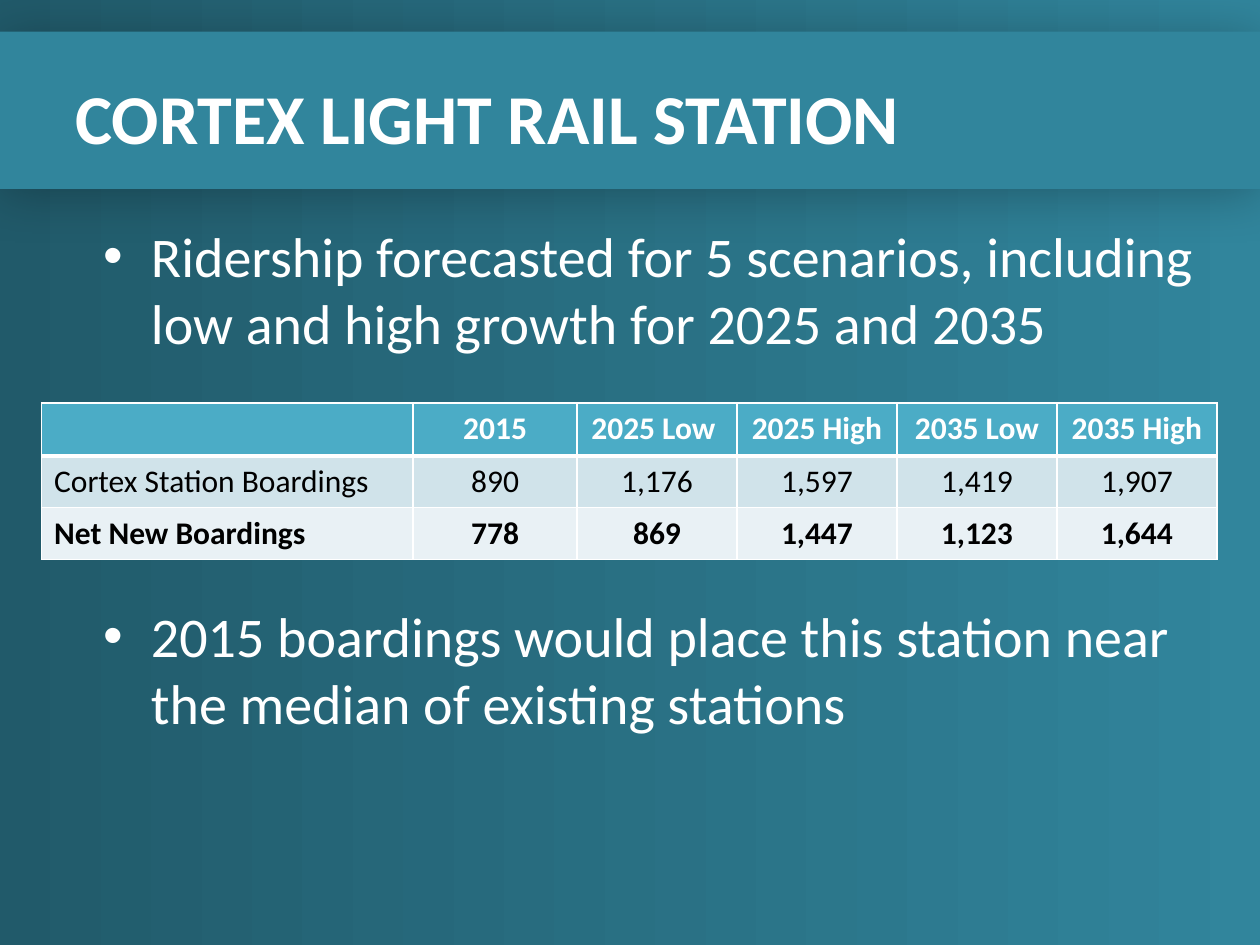
from lxml.etree import SubElement
from pptx import Presentation
from pptx.dml.color import RGBColor
from pptx.enum.shapes import MSO_SHAPE
from pptx.enum.text import MSO_ANCHOR, PP_ALIGN
from pptx.oxml.ns import qn
from pptx.util import Inches, Pt

WIDTH, HEIGHT = 10, 7.5
WHITE, BLACK = "FFFFFF", "000000"
DEEP_TEAL, TEAL, SKY = "215A6A", "31859C", "4BACC6"
BAND_DARK, BAND_LIGHT = "D0E3EA", "E9F1F5"

FORECASTS = [
    ["", "2015", "2025 Low ", "2025 High", "2035 Low", "2035 High"],
    ["Cortex Station Boardings", "890", "1,176", "1,597", "1,419", "1,907"],
    ["Net New Boardings", "778", "869", "1,447", "1,123", "1,644"],
]
FINDINGS = [
    "Ridership forecasted for 5 scenarios, including low and high growth for 2025 and 2035",
    "2015 boardings would place this station near the median of existing stations",
]


def rgb(color):
    return RGBColor.from_string(color)


def write(paragraph, text, size=18, color=WHITE, bold=False, align=PP_ALIGN.LEFT, font="Calibri"):
    paragraph.alignment = align
    run = paragraph.add_run()
    run.text = text
    run.font.name, run.font.size, run.font.bold = font, Pt(size), bold
    run.font.color.rgb = rgb(color)


def add_color(parent, color):
    return SubElement(parent, qn("a:srgbClr"), val=color)


def set_borders(cell, **widths):
    """Draw white cell borders, with widths in points keyed L, R, T and B."""
    properties = cell._tc.get_or_add_tcPr()
    for position, side in enumerate("LRTB"):
        line = SubElement(properties, qn(f"a:ln{side}"), w=str(Pt(widths.get(side, 1))))
        add_color(SubElement(line, qn("a:solidFill")), WHITE)
        properties.insert(position, line)


class RidershipSlide:
    """Holds the slide; positions and sizes are shares of its width and height."""

    def __init__(self, presentation):
        self.slide = presentation.slides.add_slide(presentation.slide_layouts[6])
        self.shapes = self.slide.shapes

    def box(self, left, top, width, height):
        return (Inches(left * WIDTH), Inches(top * HEIGHT),
                Inches(width * WIDTH), Inches(height * HEIGHT))

    def background(self, *colors):
        fill = self.slide.background.fill
        fill.gradient()
        fill.gradient_angle = 0
        for stop, color in zip(fill.gradient_stops, colors):
            stop.color.rgb = rgb(color)

    def banner(self, *place, color):
        banner = self.shapes.add_shape(MSO_SHAPE.RECTANGLE, *self.box(*place))
        banner.fill.solid()
        banner.fill.fore_color.rgb = rgb(color)
        banner.line.fill.background()
        banner.shadow.inherit = False
        effects = banner._element.spPr.find(qn("a:effectLst"))
        shadow = SubElement(effects, qn("a:outerShdw"), blurRad=str(Pt(29)),
                            dist=str(Pt(3)), dir="5400000", rotWithShape="0")
        SubElement(add_color(shadow, BLACK), qn("a:alpha"), val="26000")

    def text_frame(self, *place, anchor=MSO_ANCHOR.TOP):
        frame = self.shapes.add_textbox(*self.box(*place)).text_frame
        frame.word_wrap = True
        frame.vertical_anchor = anchor
        return frame

    def title(self, *place, text):
        frame = self.text_frame(*place, anchor=MSO_ANCHOR.MIDDLE)
        write(frame.paragraphs[0], text, size=40, bold=True)

    def bullets(self, *place, items, gap):
        frame = self.text_frame(*place)
        for index, item in enumerate(items):
            paragraph = frame.add_paragraph() if index else frame.paragraphs[0]
            if index:
                paragraph.space_before = Pt(gap)
            properties = paragraph._p.get_or_add_pPr()
            properties.set("marL", str(Inches(0.38)))
            properties.set("indent", str(Inches(-0.38)))
            SubElement(properties, qn("a:buFont"), typeface="Arial")
            SubElement(properties, qn("a:buChar"), char="•")
            write(paragraph, item, size=32)

    def table(self, *place, rows, widths, heights):
        table = self.shapes.add_table(len(rows), len(widths), *self.box(*place)).table
        for column, width in zip(table.columns, widths):
            column.width = Inches(width * WIDTH)
        for row, height in zip(table.rows, heights):
            row.height = Inches(height * HEIGHT)
        for r, values in enumerate(rows):
            header = r == 0
            for c, value in enumerate(values):
                cell = table.cell(r, c)
                cell.fill.solid()
                cell.fill.fore_color.rgb = rgb((SKY, BAND_DARK, BAND_LIGHT)[r])
                cell.vertical_anchor = MSO_ANCHOR.TOP if header else MSO_ANCHOR.MIDDLE
                set_borders(cell, T=3 if r == 1 else 1, B=3 if header else 1)
                if value:
                    write(cell.text_frame.paragraphs[0], value,
                          color=WHITE if header else BLACK, bold=r != 1,
                          align=PP_ALIGN.CENTER if c else PP_ALIGN.LEFT)


def main():
    presentation = Presentation()
    presentation.slide_width, presentation.slide_height = Inches(WIDTH), Inches(HEIGHT)
    page = RidershipSlide(presentation)
    page.background(DEEP_TEAL, TEAL)
    page.banner(0, 1 / 30, 1, 1 / 6, color=TEAL)
    page.title(0.05, 0.04, 0.9, 1 / 6, text="CORTEX LIGHT RAIL STATION")
    page.table(0.033, 3.2 / HEIGHT, 0.933, 1.23 / HEIGHT, rows=FORECASTS,
               widths=[0.295, 0.13] + [0.127] * 4,
               heights=[0.42 / HEIGHT] + [0.41 / HEIGHT] * 2)
    page.bullets(0.072, 1.71 / HEIGHT, 0.9, 4.82 / HEIGHT, items=FINDINGS, gap=140)
    presentation.save("out.pptx")


if __name__ == "__main__":
    main()
